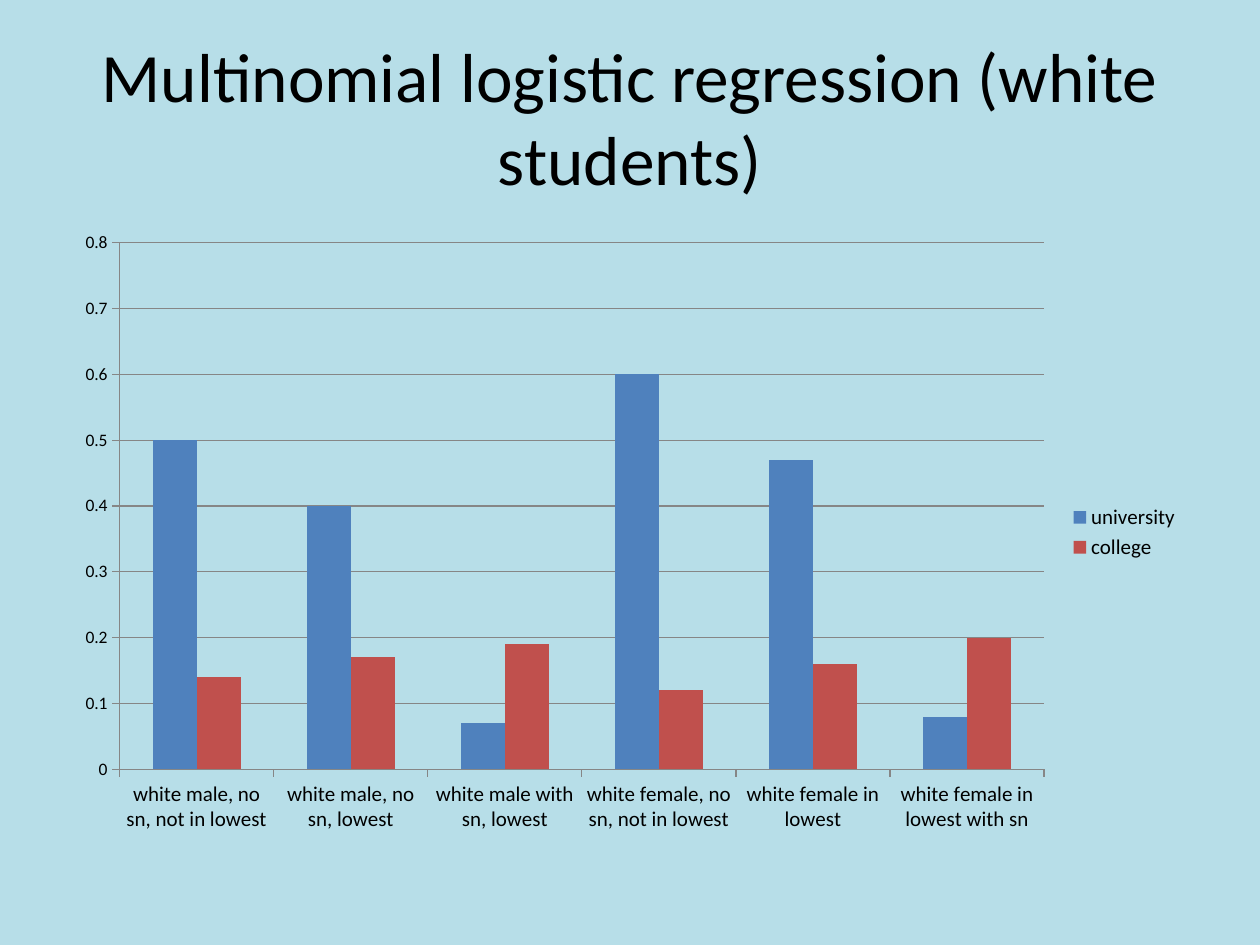
import pptx
import pptx.chart.data
import pptx.dml.color
import pptx.enum.chart
import pptx.enum.text
import pptx.util

PX = 9144  # EMU per px, 100 px to the inch
FONT = "Calibri"
COLORS = {
    "background": "B7DEE8",
    "text": "000000",
    "lines": "868686",
    "university": "4F81BD",
    "college": "C0504D",
}
CATEGORIES = [
    "white male, no sn, not in lowest",
    "white male, no sn, lowest",
    "white male with sn, lowest",
    "white female, no sn, not in lowest",
    "white female in lowest",
    "white female in lowest with sn",
]
SERIES = {
    "university ": [0.5, 0.4, 0.07, 0.6, 0.47, 0.08],
    "college": [0.14, 0.17, 0.19, 0.12, 0.16, 0.2],
}


def color(name):
    return pptx.dml.color.RGBColor.from_string(COLORS[name])


def to_emu(box):
    return [length * PX for length in box]


def style_font(font, size):
    font.name = FONT
    font.size = pptx.util.Pt(size)
    font.color.rgb = color("text")


def style_line(line):
    line.color.rgb = color("lines")
    line.width = pptx.util.Pt(0.75)


def add_title(page, box, text):
    title = page.shapes.title
    title.left, title.top, title.width, title.height = to_emu(box)
    frame = title.text_frame
    frame.text = text
    frame.word_wrap = True
    frame.auto_size = pptx.enum.text.MSO_AUTO_SIZE.NONE
    frame.vertical_anchor = pptx.enum.text.MSO_ANCHOR.MIDDLE
    para = frame.paragraphs[0]
    para.alignment = pptx.enum.text.PP_ALIGN.CENTER
    style_font(para.runs[0].font, 39.6)


def add_probability_chart(page, box):
    data = pptx.chart.data.CategoryChartData()
    data.categories = CATEGORIES
    for name, values in SERIES.items():
        data.add_series(name, values)
    kind = pptx.enum.chart.XL_CHART_TYPE.COLUMN_CLUSTERED
    chart = page.shapes.add_chart(kind, *to_emu(box), data).chart
    chart.has_title = False
    style_font(chart.font, 10)

    # Columns
    plot = chart.plots[0]
    plot.gap_width = 150
    plot.overlap = 0
    plot.vary_by_categories = False
    for series in plot.series:
        series.format.fill.solid()
        series.format.fill.fore_color.rgb = color(series.name.strip())

    # Axes and gridlines
    for axis, size in ((chart.category_axis, 12), (chart.value_axis, 10)):
        axis.major_tick_mark = pptx.enum.chart.XL_TICK_MARK.OUTSIDE
        axis.minor_tick_mark = pptx.enum.chart.XL_TICK_MARK.NONE
        style_line(axis.format.line)
        style_font(axis.tick_labels.font, size)
    values = chart.value_axis
    values.minimum_scale, values.maximum_scale, values.major_unit = 0, 0.8, 0.1
    values.has_major_gridlines = True
    style_line(values.major_gridlines.format.line)

    # Legend
    chart.has_legend = True
    chart.legend.position = pptx.enum.chart.XL_LEGEND_POSITION.RIGHT
    chart.legend.include_in_layout = False
    style_font(chart.legend.font, 12)


def main():
    deck = pptx.Presentation()
    deck.slide_width, deck.slide_height = to_emu((1000, 750))
    page = deck.slides.add_slide(deck.slide_layouts.get_by_name("Title Only"))
    page.background.fill.solid()
    page.background.fill.fore_color.rgb = color("background")
    add_title(page, (50, 30, 900, 125), "Multinomial logistic regression (white students)")
    add_probability_chart(page, (50, 175, 900, 495))
    deck.save("out.pptx")


if __name__ == "__main__":
    main()
